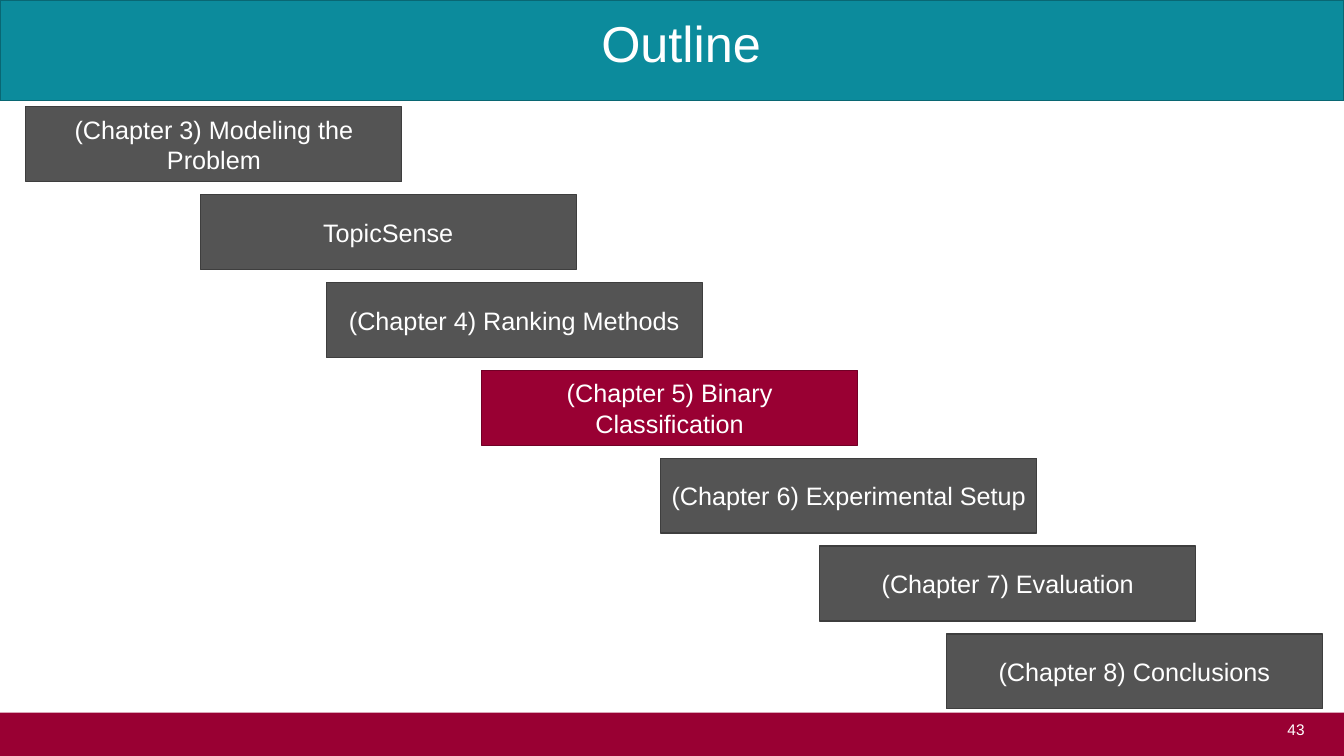
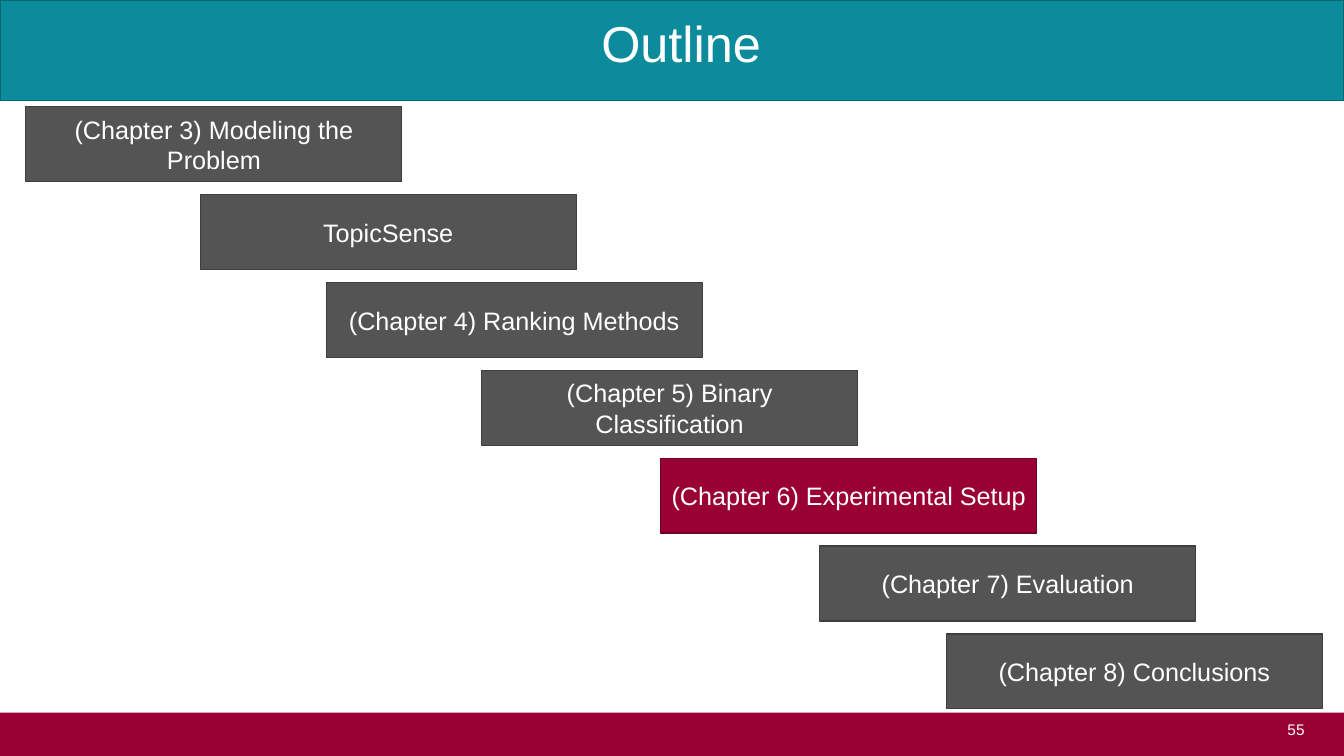
"""Build the two outline slides of a thesis talk."""
from dataclasses import dataclass

from pptx import Presentation
from pptx.dml.color import RGBColor
from pptx.enum.shapes import MSO_SHAPE
from pptx.enum.text import MSO_ANCHOR, MSO_AUTO_SIZE, PP_ALIGN
from pptx.util import Pt

RECT = MSO_SHAPE.RECTANGLE
TOP, MIDDLE = MSO_ANCHOR.TOP, MSO_ANCHOR.MIDDLE
CENTER, RIGHT = PP_ALIGN.CENTER, PP_ALIGN.RIGHT
NO_AUTOFIT = MSO_AUTO_SIZE.NONE
TITLE_ONLY = 5


@dataclass(frozen=True)
class Theme:
    """Colours, font and type sizes of the deck."""
    teal: str = "0C8B9C"
    teal_edge: str = "096773"
    maroon: str = "990033"
    maroon_edge: str = "710026"
    gray: str = "545454"
    gray_edge: str = "3E3E3E"
    white: str = "FFFFFF"
    font: str = "Arial"
    title: int = 36
    body: int = 18
    number: int = 11
    edge: float = 0.85


THEME = Theme()
WIDTH, HEIGHT = 960, 540
STEP_TOP, STEP_PITCH = 76.3, 62.75
STEP_WIDTH, STEP_HEIGHT = 268.6, 53.5
CHAPTERS = [
    ("(Chapter 3) Modeling the Problem", 18.5),
    ("TopicSense", 143),
    ("(Chapter 4) Ranking Methods", 233),
    ("(Chapter 5) Binary Classification", 344),
    ("(Chapter 6) Experimental Setup", 472),
    ("(Chapter 7) Evaluation", 585.5),
    ("(Chapter 8) Conclusions", 676),
]
SLIDES = [(43, 3), (55, 4)]


def set_text(sp, text, size=THEME.body, align=CENTER, anchor=MIDDLE, spacing=None):
    """Write one formatted paragraph into a shape."""
    tf = sp.text_frame
    tf.word_wrap = True
    tf.auto_size = NO_AUTOFIT
    tf.vertical_anchor = anchor
    p = tf.paragraphs[0]
    p.alignment = align
    p.line_spacing = spacing
    r = p.add_run()
    r.text = text
    r.font.name = THEME.font
    r.font.size = Pt(size)
    r.font.color.rgb = RGBColor.from_string(THEME.white)


def add_box(s, left, top, width, height, fill, edge=None):
    """Add a filled rectangle, outlined when an edge colour is given."""
    sp = s.shapes.add_shape(RECT, Pt(left), Pt(top), Pt(width), Pt(height))
    sp.shadow.inherit = False
    sp.fill.solid()
    sp.fill.fore_color.rgb = RGBColor.from_string(fill)
    if edge:
        sp.line.color.rgb = RGBColor.from_string(edge)
        sp.line.width = Pt(THEME.edge)
    else:
        sp.line.fill.background()
    return sp


def move_bands_to_layout(s):
    """Draw the header and footer bands and hand them to the slide's layout."""
    bands = [
        add_box(s, 0, 0, WIDTH, 72, THEME.teal, THEME.teal_edge),
        add_box(s, 0, 509, WIDTH, HEIGHT - 509, THEME.maroon),
    ]
    tree = s.slide_layout.shapes.element
    for i, band in enumerate(bands):
        tree.insert(2 + i, band.element)


def set_title(s, text):
    """Place and format the title placeholder."""
    sp = s.shapes.title
    sp.left, sp.top, sp.width, sp.height = Pt(31), Pt(10), Pt(911), Pt(52.5)
    set_text(sp, text, size=THEME.title, anchor=TOP, spacing=0.9)


def add_number(s, number):
    """Add the page number in the footer band."""
    sp = s.shapes.add_textbox(Pt(818.5), Pt(511), Pt(120.5), Pt(29))
    set_text(sp, str(number), size=THEME.number, align=RIGHT, anchor=TOP)


def add_steps(s, current):
    """Add the staircase of chapters with the current one highlighted."""
    for i, (label, left) in enumerate(CHAPTERS):
        colors = (THEME.gray, THEME.gray_edge)
        if i == current:
            colors = (THEME.maroon, THEME.maroon_edge)
        top = STEP_TOP + i * STEP_PITCH
        sp = add_box(s, left, top, STEP_WIDTH, STEP_HEIGHT, *colors)
        set_text(sp, label)


def main():
    """Build and save the deck."""
    prs = Presentation()
    prs.slide_width, prs.slide_height = Pt(WIDTH), Pt(HEIGHT)
    layout = prs.slide_layouts[TITLE_ONLY]
    for number, current in SLIDES:
        s = prs.slides.add_slide(layout)
        set_title(s, "Outline")
        add_number(s, number)
        add_steps(s, current)
    move_bands_to_layout(prs.slides[0])
    prs.save("out.pptx")


if __name__ == "__main__":
    main()
